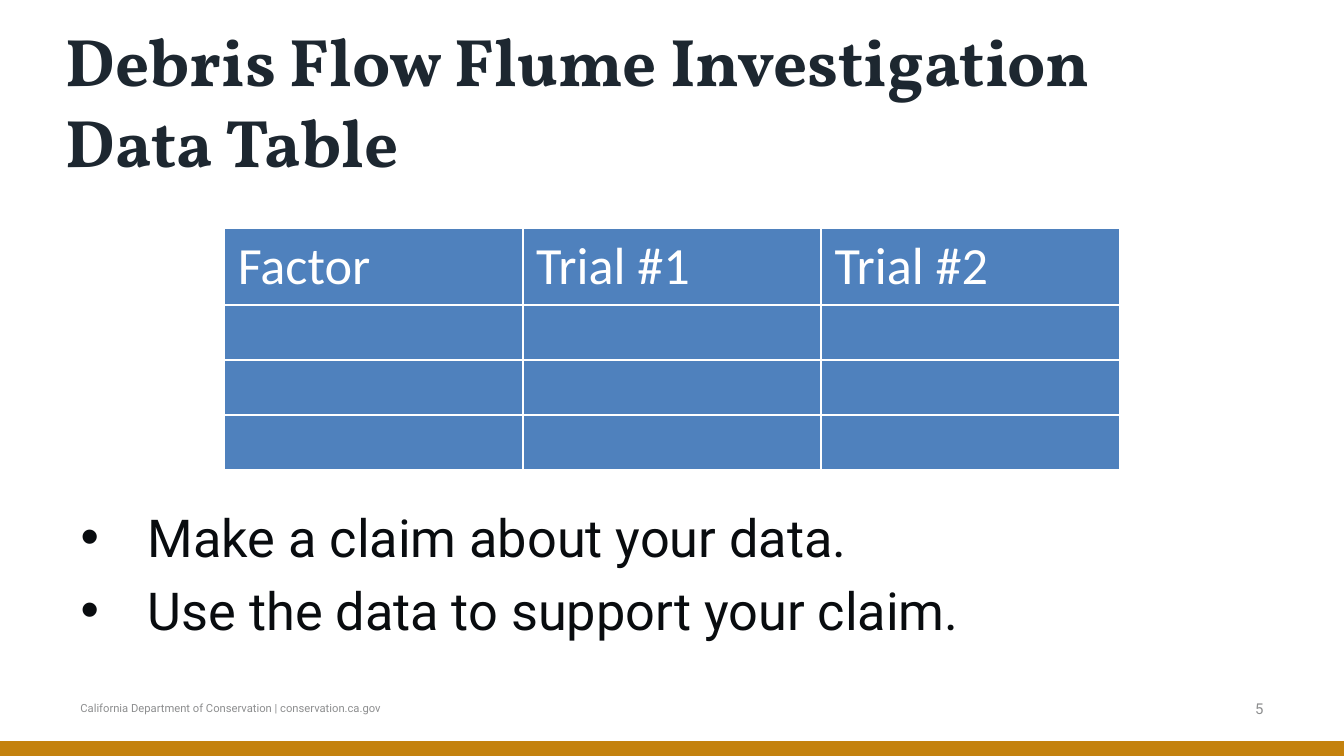
from dataclasses import dataclass

from lxml import etree
from pptx import Presentation
from pptx.dml.color import RGBColor
from pptx.enum.shapes import MSO_CONNECTOR
from pptx.enum.text import MSO_ANCHOR, MSO_AUTO_SIZE, PP_ALIGN
from pptx.oxml.ns import qn
from pptx.util import Inches, Pt

LINE = MSO_CONNECTOR.STRAIGHT
MID = MSO_ANCHOR.MIDDLE
GROW = MSO_AUTO_SIZE.SHAPE_TO_FIT_TEXT
FIXED = MSO_AUTO_SIZE.NONE
LEFT, RIGHT = PP_ALIGN.LEFT, PP_ALIGN.RIGHT


@dataclass(frozen=True)
class Theme:
    ink: str = "1D2730"
    text: str = "090C0F"
    muted: str = "8D8E8F"
    gold: str = "C4820E"
    blue: str = "4F81BD"
    white: str = "FFFFFF"
    head: str = "Vollkorn"
    body: str = "Roboto"
    grid: str = "Calibri"
    title: int = 36
    main: int = 28
    page: int = 8
    foot: int = 6


THEME = Theme()


def color(code):
    return RGBColor.from_string(code)


def style(para, name, size, code, bold=False):
    font = para.font
    font.name, font.size, font.bold = name, Pt(size), bold
    font.color.rgb = color(code)


def place(shape, left, top, width, height):
    shape.left, shape.top = Inches(left), Inches(top)
    shape.width, shape.height = Inches(width), Inches(height)


def add_title(slide, text):
    shape = slide.shapes.title
    place(shape, 0.49, 0.14, 9.51, 1.21)
    frame = shape.text_frame
    frame.text = text
    frame.auto_size = FIXED
    frame.vertical_anchor = MID
    frame.margin_left = frame.margin_right = 0
    frame.margin_top = frame.margin_bottom = 0
    para = frame.paragraphs[0]
    para.alignment = LEFT
    style(para, THEME.head, THEME.title, THEME.ink, True)


def add_list(slide, items):
    shape = slide.placeholders[1]
    place(shape, 0.5, 3.71, 9, 1.14)
    frame = shape.text_frame
    frame.text = "\n".join(items)
    frame.auto_size = GROW
    for para in frame.paragraphs:
        props = para._p.get_or_add_pPr()
        props.set("marL", str(Inches(0.5)))
        props.set("indent", str(Inches(-0.5)))
        etree.SubElement(props, qn("a:buFont"), typeface="Arial")
        etree.SubElement(props, qn("a:buChar"), char="•")
        style(para, THEME.body, THEME.main, THEME.text)
    frame.paragraphs[0].space_before = Pt(0)


def add_note(slide, text, left, width, size, align=LEFT):
    box = slide.shapes.add_textbox(
        Inches(left), Inches(5.02), Inches(width), Inches(0.5))
    frame = box.text_frame
    frame.text = text
    frame.word_wrap = True
    frame.vertical_anchor = MID
    para = frame.paragraphs[0]
    para.alignment = align
    style(para, THEME.body, size, THEME.muted)


def add_rule(slide):
    rule = slide.shapes.add_connector(
        LINE, Inches(10), Inches(5.57), 0, Inches(5.57))
    rule.line.color.rgb = color(THEME.gold)
    rule.line.width = Pt(8)
    etree.SubElement(rule._element.spPr, qn("a:effectLst"))


def paint(cell):
    props = cell._tc.get_or_add_tcPr()
    for side in "LRTB":
        edge = etree.SubElement(props, qn(f"a:ln{side}"), w=str(Pt(1)))
        fill = etree.SubElement(edge, qn("a:solidFill"))
        etree.SubElement(fill, qn("a:srgbClr"), val=THEME.white)
    cell.fill.solid()
    cell.fill.fore_color.rgb = color(THEME.blue)


def add_grid(slide, heads, rows):
    frame = slide.shapes.add_table(
        rows, len(heads), Inches(1.67), Inches(1.7), Inches(6.66), Inches(1.78))
    table = frame.table
    for row in table.rows:
        row.height = Inches(0.41)
    for cell in table.iter_cells():
        paint(cell)
    for cell, head in zip(table.rows[0].cells, heads):
        cell.text = head
        style(cell.text_frame.paragraphs[0], THEME.grid, THEME.main, THEME.white)


def main():
    deck = Presentation()
    deck.slide_width = Inches(10)
    deck.slide_height = deck.slide_width * 9 // 16
    slide = deck.slides.add_slide(deck.slide_layouts[1])
    add_note(slide, "California Department of Conservation | conservation.ca.gov",
             0.5, 4.29, THEME.foot)
    add_rule(slide)
    add_title(slide, "Debris Flow Flume Investigation \vData Table")
    add_note(slide, "5", 7.17, 2.33, THEME.page, RIGHT)
    add_grid(slide, ["Factor", "Trial #1", "Trial #2"], 4)
    add_list(slide, ["Make a claim about your data.",
                     "Use the data to support your claim."])
    deck.save("out.pptx")


if __name__ == "__main__":
    main()
